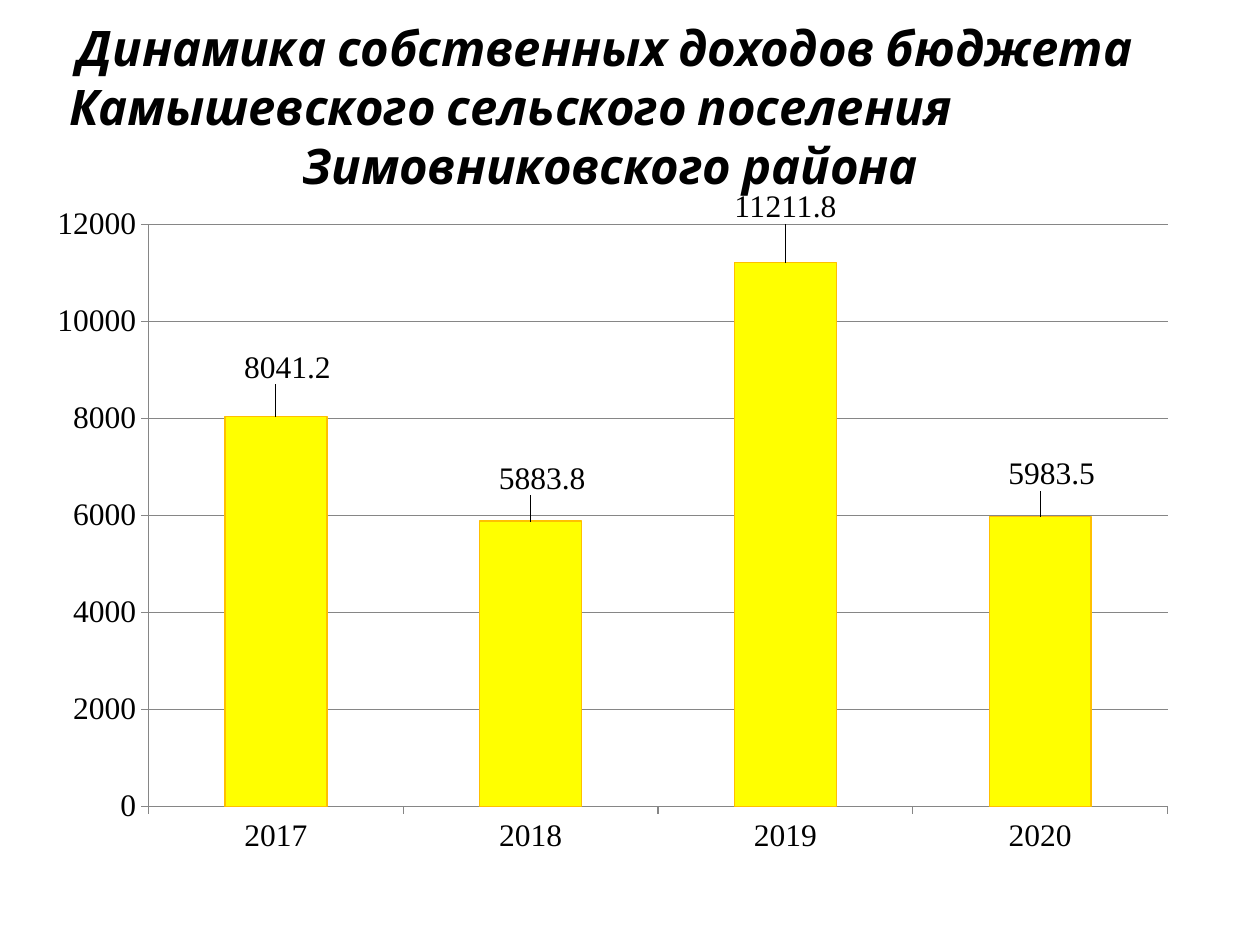
from dataclasses import dataclass

import pptx
import pptx.chart.data
import pptx.dml.color
import pptx.enum.chart
import pptx.enum.text
import pptx.oxml
import pptx.oxml.ns
import pptx.util
from pptx.util import Inches

ALIGN = pptx.enum.text.PP_ALIGN
TICK = pptx.enum.chart.XL_TICK_MARK
GREY = "868686"


@dataclass
class Bar:
    year: str
    income: float
    label_dx: float
    label_dy: float


@dataclass
class Line:
    text: str
    align: ALIGN
    indent: float = 0


BARS = [
    Bar("2017", 8041.2, 0.01, -0.04),
    Bar("2018", 5883.8, 0.01, -0.03),
    Bar("2019", 11211.8, 0, -0.05),
    Bar("2020", 5983.5, 0.01, -0.03),
]
TITLE = [
    Line("Динамика собственных доходов бюджета ", ALIGN.CENTER),
    Line("Камышевского сельского поселения", ALIGN.LEFT, 0.06),
    Line("Зимовниковского района", ALIGN.CENTER),
]


def rgb(value: str) -> pptx.dml.color.RGBColor:
    return pptx.dml.color.RGBColor.from_string(value)


def set_font(font, *, size: float, name: str, color: str = "000000",
             bold: bool = False, italic: bool = False) -> None:
    font.size = pptx.util.Pt(size)
    font.name = name
    font.color.rgb = rgb(color)
    font.bold = bold
    font.italic = italic


def set_line(line, color: str, width: float = 0.75) -> None:
    line.color.rgb = rgb(color)
    line.width = pptx.util.Pt(width)


def add_text(slide, lines: list[Line], *, left: float, top: float,
             width: float, height: float, **style) -> None:
    sp = slide.shapes.add_textbox(Inches(left), Inches(top), Inches(width), Inches(height))
    tf = sp.text_frame
    tf.word_wrap = True
    tf.vertical_anchor = pptx.enum.text.MSO_ANCHOR.MIDDLE
    for i, line in enumerate(lines):
        p = tf.add_paragraph() if i else tf.paragraphs[0]
        p.alignment = line.align
        if line.indent:
            p._p.get_or_add_pPr().set("marL", str(Inches(line.indent)))
        r = p.add_run()
        r.text = line.text
        set_font(r.font, **style)


def make_layout(*, inner: bool = False, **values: float):
    target = '<c:layoutTarget val="inner"/><c:xMode val="edge"/><c:yMode val="edge"/>'
    body = "".join(f'<c:{key} val="{value}"/>' for key, value in values.items())
    return pptx.oxml.parse_xml(
        f'<c:layout {pptx.oxml.ns.nsdecls("c")}><c:manualLayout>'
        f'{target if inner else ""}{body}</c:manualLayout></c:layout>'
    )


def style_axis(axis) -> None:
    axis.major_tick_mark = TICK.OUTSIDE
    axis.minor_tick_mark = TICK.NONE
    set_line(axis.format.line, GREY)


def add_income_chart(slide, bars: list[Bar]) -> None:
    data = pptx.chart.data.CategoryChartData()
    data.categories = [bar.year for bar in bars]
    data.add_series("Series 1", [bar.income for bar in bars])
    chart = slide.shapes.add_chart(
        pptx.enum.chart.XL_CHART_TYPE.COLUMN_CLUSTERED,
        Inches(0.28), Inches(1.51), Inches(9.18), Inches(5.36), data,
    ).chart
    chart.has_legend = False
    chart.has_title = False
    set_font(chart.font, size=18, name="Times New Roman")

    style_axis(chart.category_axis)
    axis = chart.value_axis
    style_axis(axis)
    axis.minimum_scale, axis.maximum_scale, axis.major_unit = 0, 12000, 2000
    axis.has_major_gridlines = True
    set_line(axis.major_gridlines.format.line, GREY)

    area = chart._chartSpace.chart.plotArea
    for old in area.findall(pptx.oxml.ns.qn("c:layout")):
        area.remove(old)
    area.insert(0, make_layout(inner=True, x=0.098, y=0.046, w=0.881, h=0.866))

    plot = chart.plots[0]
    plot.gap_width = 150
    plot.vary_by_categories = False
    series = plot.series[0]
    series.format.fill.solid()
    series.format.fill.fore_color.rgb = rgb("FFFF00")
    set_line(series.format.line, "FFC000")
    series.data_labels.show_value = True
    for i, bar in enumerate(bars):
        label = series.points[i].data_label
        label.position = pptx.enum.chart.XL_LABEL_POSITION.OUTSIDE_END
        label._dLbl.insert(1, make_layout(x=bar.label_dx, y=bar.label_dy))


def main() -> None:
    prs = pptx.Presentation()
    prs.slide_width, prs.slide_height = Inches(10), Inches(7.5)
    s = prs.slides.add_slide(prs.slide_layouts[6])
    add_text(s, TITLE, left=0.39, top=0.16, width=8.91, height=1.36,
             size=28, name="Cabin", bold=True, italic=True)
    add_income_chart(s, BARS)
    prs.save("out.pptx")


if __name__ == "__main__":
    main()
